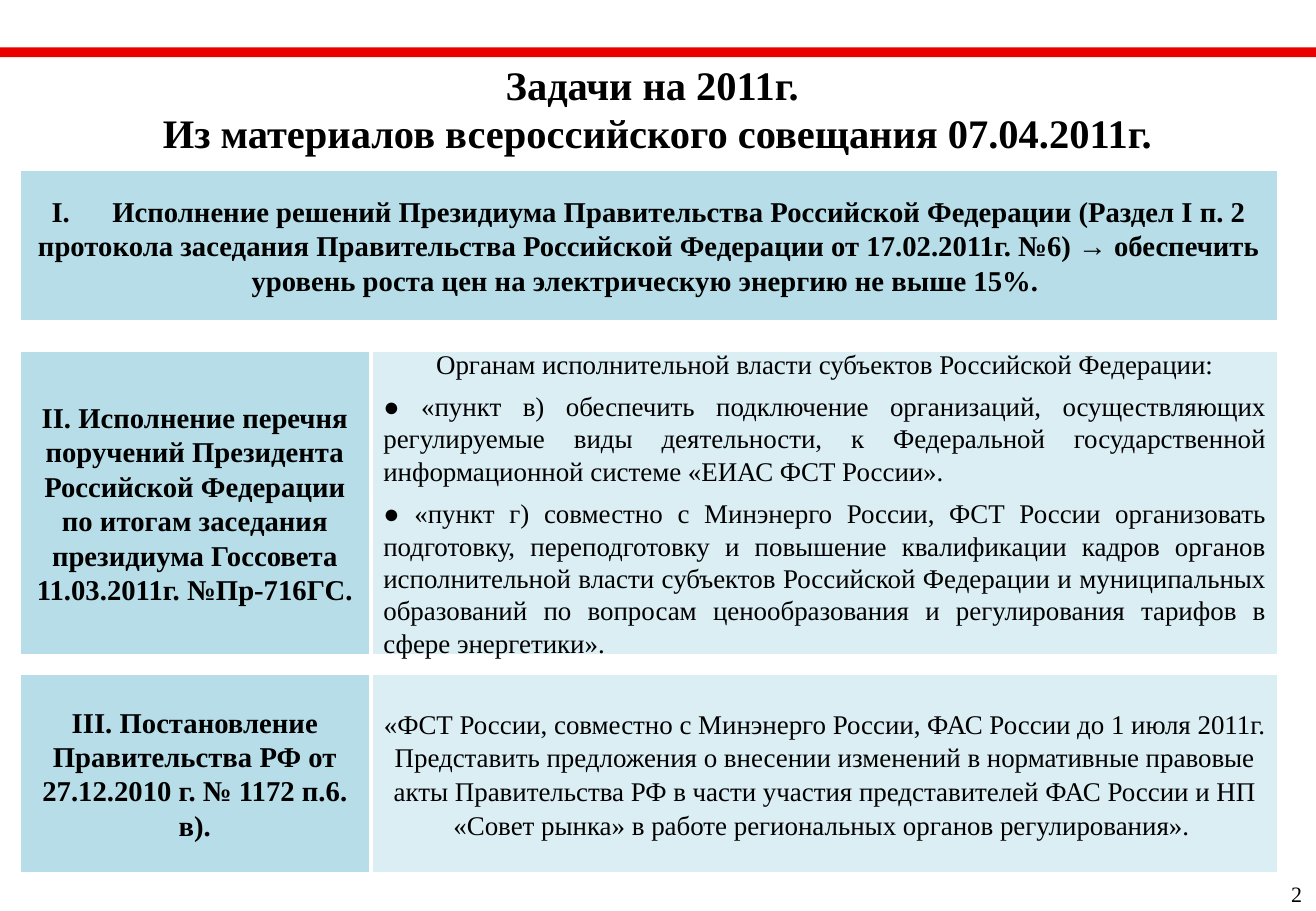
import pptx
import pptx.util
import pptx.dml.color
import pptx.enum.shapes
import pptx.enum.text

Inches, Pt = pptx.util.Inches, pptx.util.Pt
ALIGN = pptx.enum.text.PP_ALIGN
ANCHOR = pptx.enum.text.MSO_ANCHOR
RECT = pptx.enum.shapes.MSO_SHAPE.RECTANGLE

COLORS = {"bar": "EB0000", "head": "B7DEE8", "body": "DBEEF4",
          "white": "FFFFFF", "text": "000000"}
FONT = "Times New Roman"

TITLE = ["Задачи на 2011г. ", "Из материалов всероссийского совещания 07.04.2011г."]
DECISION = ("I.\tИсполнение решений Президиума Правительства Российской Федерации (Раздел I п. 2 "
            "протокола заседания Правительства Российской Федерации от 17.02.2011г. №6) → обеспечить "
            "уровень роста цен на электрическую энергию не выше 15%. ")
ORDERS = ("II. Исполнение перечня поручений Президента Российской Федерации по итогам заседания "
          "президиума Госсовета 11.03.2011г. №Пр-716ГС.")
AUTHORITIES = "Органам исполнительной власти субъектов Российской Федерации:"
POINTS = [
    "«пункт в) обеспечить подключение организаций, осуществляющих регулируемые виды деятельности, "
    "к Федеральной государственной информационной системе «EИАС ФСТ России».",
    "«пункт г) совместно с Минэнерго России, ФСТ России организовать подготовку, переподготовку и "
    "повышение квалификации кадров органов исполнительной власти субъектов Российской Федерации и "
    "муниципальных образований по вопросам ценообразования и регулирования тарифов в сфере энергетики».",
]
RESOLUTION = "III. Постановление Правительства РФ от 27.12.2010 г. № 1172 п.6. в)."
PROPOSALS = ("«ФСТ России, совместно с Минэнерго России, ФАС России до 1 июля 2011г. Представить "
             "предложения о внесении изменений в нормативные правовые акты Правительства РФ в части "
             "участия представителей ФАС России и НП «Совет рынка» в работе региональных органов "
             "регулирования». ")

LEFT, HEAD_W, BODY_W, GAP = 0.16, 2.89, 7.47, 0.01
BODY_LEFT = LEFT + HEAD_W + GAP
FULL_W = HEAD_W + GAP + BODY_W
DECISION_ROW, ORDERS_ROW, RESOLUTION_ROW = (1.39, 1.26), (2.88, 2.52), (5.54, 1.65)


def rgb(name):
    return pptx.dml.color.RGBColor.from_string(COLORS[name])


def write(tf, text, size=16, bold=False, align=ALIGN.CENTER, before=0, line=None, bullet=None):
    p = tf.paragraphs[0]
    if p.runs:
        p = tf.add_paragraph()
    p.alignment = align
    p.space_before = Pt(before)
    if line:
        p.line_spacing = Pt(line)
    parts = [(text, bold)]
    if bullet:
        parts.insert(0, (bullet, True))
    for words, heavy in parts:
        r = p.add_run()
        r.text = words
        r.font.name = FONT
        r.font.size = Pt(size)
        r.font.bold = heavy
        r.font.color.rgb = rgb("text")


def add_box(s, left, top, width, height, fill, outlined=True):
    sp = s.shapes.add_shape(RECT, Inches(left), Inches(top), Inches(width), Inches(height))
    sp.shadow.inherit = False
    sp.fill.solid()
    sp.fill.fore_color.rgb = rgb(fill)
    if outlined:
        sp.line.color.rgb = rgb("white")
        sp.line.width = Pt(2)
    else:
        sp.line.fill.background()
    tf = sp.text_frame
    tf.word_wrap = True
    tf.vertical_anchor = ANCHOR.MIDDLE
    return tf


def main():
    prs = pptx.Presentation()
    prs.slide_width, prs.slide_height = Inches(10.84), Inches(7.5)
    s = prs.slides.add_slide(prs.slide_layouts[5])

    add_box(s, 0, 0.39, 10.84, 0.08, "bar", outlined=False)

    title = s.shapes.title
    title.left, title.top = Inches(0), Inches(0.44)
    title.width, title.height = Inches(10.83), Inches(0.94)
    tf = title.text_frame
    tf.vertical_anchor = ANCHOR.TOP
    tf.auto_size = pptx.enum.text.MSO_AUTO_SIZE.NONE
    for text in TITLE:
        write(tf, text, size=24, bold=True)

    write(add_box(s, LEFT, DECISION_ROW[0], FULL_W, DECISION_ROW[1], "head"),
          DECISION, size=17, bold=True)

    for (top, height), text in ((ORDERS_ROW, ORDERS), (RESOLUTION_ROW, RESOLUTION)):
        write(add_box(s, LEFT, top, HEAD_W, height, "head"), text, size=17, bold=True)

    tf = add_box(s, BODY_LEFT, ORDERS_ROW[0], BODY_W, ORDERS_ROW[1], "body")
    write(tf, AUTHORITIES)
    for point in POINTS:
        write(tf, point, align=ALIGN.JUSTIFY, before=6, bullet="● ")

    write(add_box(s, BODY_LEFT, RESOLUTION_ROW[0], BODY_W, RESOLUTION_ROW[1], "body"),
          PROPOSALS, line=20)

    number = s.shapes.add_textbox(Inches(10.53), Inches(7.2), Inches(0.3), Inches(0.32))
    number.text_frame.word_wrap = False
    write(number.text_frame, "2", size=13)

    prs.save("out.pptx")


if __name__ == "__main__":
    main()
